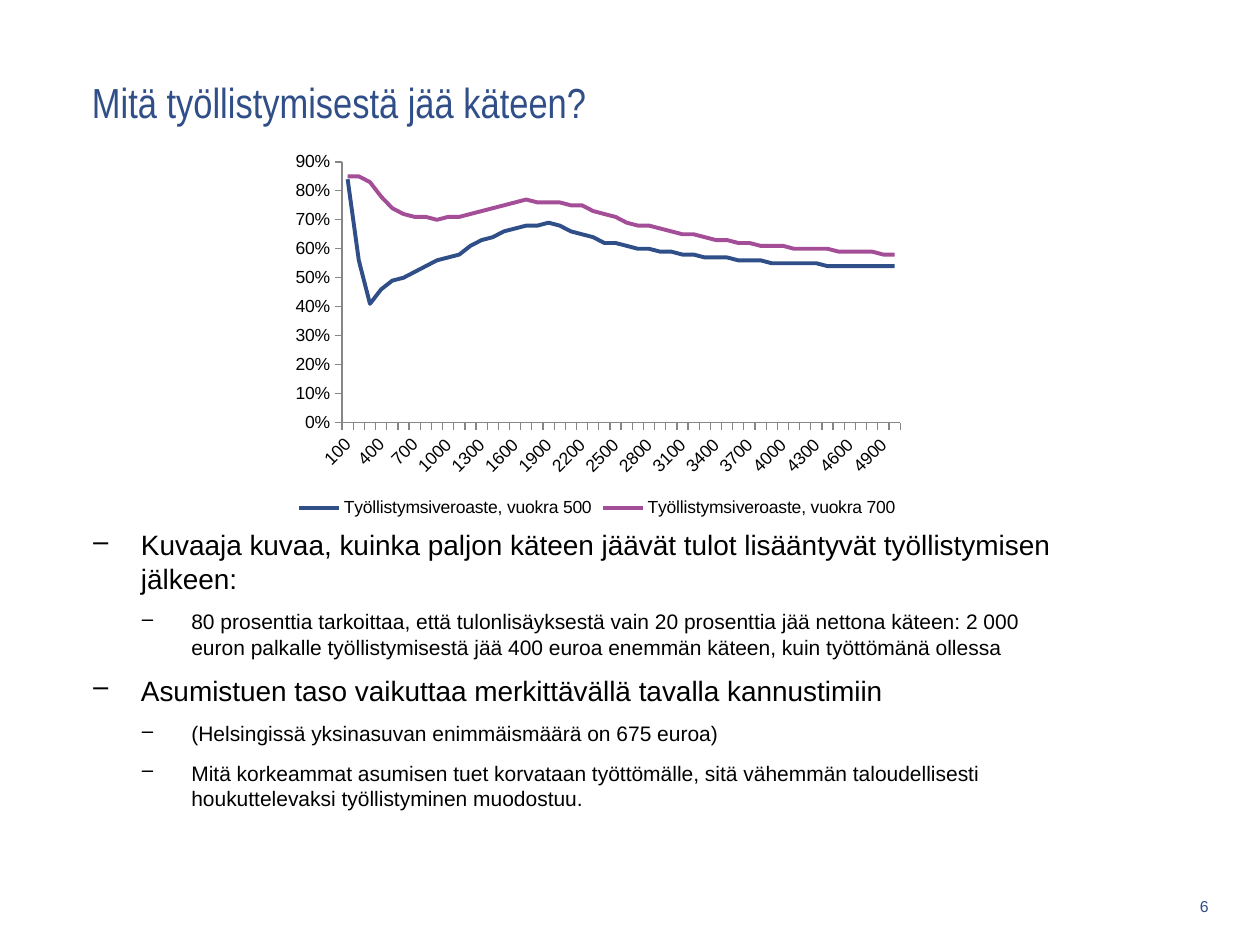
from lxml import etree
from pptx import Presentation
from pptx.chart.data import CategoryChartData
from pptx.dml.color import RGBColor
from pptx.enum.chart import XL_CHART_TYPE, XL_LEGEND_POSITION, XL_TICK_MARK
from pptx.enum.text import MSO_ANCHOR, PP_ALIGN
from pptx.oxml import parse_xml
from pptx.oxml.ns import nsdecls, qn
from pptx.util import Inches, Pt

LINE = XL_CHART_TYPE.LINE
BOTTOM = XL_LEGEND_POSITION.BOTTOM
OUTSIDE = XL_TICK_MARK.OUTSIDE
MIDDLE, TOP = MSO_ANCHOR.MIDDLE, MSO_ANCHOR.TOP
LEFT, RIGHT = PP_ALIGN.LEFT, PP_ALIGN.RIGHT

COLORS = {"blue": "304E88", "purple": "A34E96", "text": "000000", "axis": "868686"}
COLUMNS, ROWS = 100, 75

INCOMES = range(100, 5001, 100)
# Effective tax rate of employment, in per cent, for each income
RATES = {
    "Työllistymsiveroaste, vuokra 500": ("blue", [
        84, 56, 41, 46, 49, 50, 52, 54, 56, 57, 58, 61, 63, 64, 66, 67, 68,
        68, 69, 68, 66, 65, 64, 62, 62, 61, 60, 60, 59, 59, 58, 58, 57, 57,
        57, 56, 56, 56, 55, 55, 55, 55, 55, 54, 54, 54, 54, 54, 54, 54]),
    "Työllistymsiveroaste, vuokra 700": ("purple", [
        85, 85, 83, 78, 74, 72, 71, 71, 70, 71, 71, 72, 73, 74, 75, 76, 77,
        76, 76, 76, 75, 75, 73, 72, 71, 69, 68, 68, 67, 66, 65, 65, 64, 63,
        63, 62, 62, 61, 61, 61, 60, 60, 60, 60, 59, 59, 59, 59, 58, 58]),
}
POINTS = [
    (0, "Kuvaaja kuvaa, kuinka paljon käteen jäävät tulot lisääntyvät "
        "työllistymisen jälkeen:"),
    (1, "80 prosenttia tarkoittaa, että tulonlisäyksestä vain 20 prosenttia jää "
        "nettona käteen: 2 000 euron palkalle työllistymisestä jää 400 euroa "
        "enemmän käteen, kuin työttömänä ollessa"),
    (0, "Asumistuen taso vaikuttaa merkittävällä tavalla kannustimiin"),
    (1, "(Helsingissä yksinasuvan enimmäismäärä on 675 euroa)"),
    (1, "Mitä korkeammat asumisen tuet korvataan työttömälle, sitä vähemmän "
        "taloudellisesti houkuttelevaksi työllistyminen muodostuu."),
]
# Text size, left margin and hanging indent of each bullet level
LEVELS = [(16, 0.39, -0.39), (12, 0.79, -0.4)]


class SlideBuilder:
    def __init__(self, presentation):
        self.width = presentation.slide_width
        self.height = presentation.slide_height
        self.slide = presentation.slides.add_slide(presentation.slide_layouts[5])

    def box(self, column, row, columns, rows):
        """Turn grid units into left, top, width and height."""
        across, down = self.width / COLUMNS, self.height / ROWS
        return (round(column * across), round(row * down),
                round(columns * across), round(rows * down))

    def style(self, font, size, color, name="Arial"):
        font.name, font.size = name, Pt(size)
        font.color.rgb = RGBColor.from_string(COLORS[color])

    def title(self, text, *grid):
        title = self.slide.shapes.title
        title.left, title.top, title.width, title.height = self.box(*grid)
        frame = title.text_frame
        frame.text, frame.vertical_anchor = text, MIDDLE
        frame.paragraphs[0].alignment = LEFT
        self.style(frame.paragraphs[0].font, 24, "blue", "Arial Narrow")

    def text_frame(self, anchor, *grid):
        frame = self.slide.shapes.add_textbox(*self.box(*grid)).text_frame
        frame.word_wrap, frame.vertical_anchor = True, anchor
        return frame

    def page_number(self, number, *grid):
        paragraph = self.text_frame(MIDDLE, *grid).paragraphs[0]
        paragraph.text, paragraph.alignment = number, RIGHT
        self.style(paragraph.font, 9, "blue")

    def bullets(self, points, *grid):
        frame = self.text_frame(TOP, *grid)
        for index, (level, text) in enumerate(points):
            paragraph = frame.add_paragraph() if index else frame.paragraphs[0]
            size, margin, indent = LEVELS[level]
            paragraph.text, paragraph.level = text, level
            properties = paragraph._p.get_or_add_pPr()
            properties.set("marL", str(Inches(margin)))
            properties.set("indent", str(Inches(indent)))
            etree.SubElement(properties, qn("a:buChar")).set("char", "‒")
            paragraph.space_after = Pt(8)
            self.style(paragraph.font, size, "text")

    def line_chart(self, categories, rates, *grid):
        data = CategoryChartData(number_format="0%")
        data.categories = [str(category) for category in categories]
        for name, (_, percents) in rates.items():
            data.add_series(name, [percent / 100 for percent in percents])
        chart = self.slide.shapes.add_chart(LINE, *self.box(*grid), data).chart
        self.style(chart.font, 10, "text")
        chart.has_title = False
        chart.has_legend = True
        chart.legend.position = BOTTOM
        chart.legend.include_in_layout = False
        chart.plots[0].vary_by_categories = False
        for series, (color, _) in zip(chart.plots[0].series, rates.values()):
            series.smooth = False
            series.format.line.width = Pt(2.25)
            series.format.line.color.rgb = RGBColor.from_string(COLORS[color])
        self.axes(chart)
        self.plot_area(chart, x=0.095, y=0.045, w=0.886, h=0.69)

    def axes(self, chart):
        incomes, shares = chart.category_axis, chart.value_axis
        for axis in (incomes, shares):
            axis.has_major_gridlines = False
            axis.major_tick_mark = OUTSIDE
            axis.format.line.width = Pt(0.75)
            axis.format.line.color.rgb = RGBColor.from_string(COLORS["axis"])
            self.style(axis.tick_labels.font, 10, "text")
        shares.minimum_scale, shares.maximum_scale = 0, 0.9
        shares.major_unit = 0.1
        shares.tick_labels.number_format = "0%"
        shares.tick_labels.number_format_is_linked = False
        # Slanted labels, one for every third income
        incomes._element.find(qn("c:txPr")).find(qn("a:bodyPr")).set("rot", "-2700000")
        skip = parse_xml(f'<c:tickLblSkip {nsdecls("c")} val="3"/>')
        incomes._element.find(qn("c:noMultiLvlLbl")).addprevious(skip)

    def plot_area(self, chart, **shares):
        area = chart._chartSpace.chart.plotArea
        for old in area.findall(qn("c:layout")):
            area.remove(old)
        sizes = "".join(f'<c:{key} val="{value}"/>' for key, value in shares.items())
        area.insert(0, parse_xml(
            f'<c:layout {nsdecls("c")}><c:manualLayout><c:layoutTarget val="inner"/>'
            f'<c:xMode val="edge"/><c:yMode val="edge"/>{sizes}'
            '</c:manualLayout></c:layout>'))


def main():
    presentation = Presentation()
    presentation.slide_width, presentation.slide_height = Inches(10), Inches(7.5)
    builder = SlideBuilder(presentation)

    # Heading
    builder.title("Mitä työllistymisestä jää käteen?", 6.3, 1.6, 79.9, 13)
    # Explanation below the chart
    builder.bullets(POINTS, 6.3, 41.4, 79.9, 26)
    # Footer
    builder.page_number("6", 91.7, 70.3, 5.2, 3.2)
    # Tax rate by income
    builder.line_chart(INCOMES, RATES, 22.4, 11.5, 50, 30)

    presentation.save("out.pptx")


if __name__ == "__main__":
    main()
